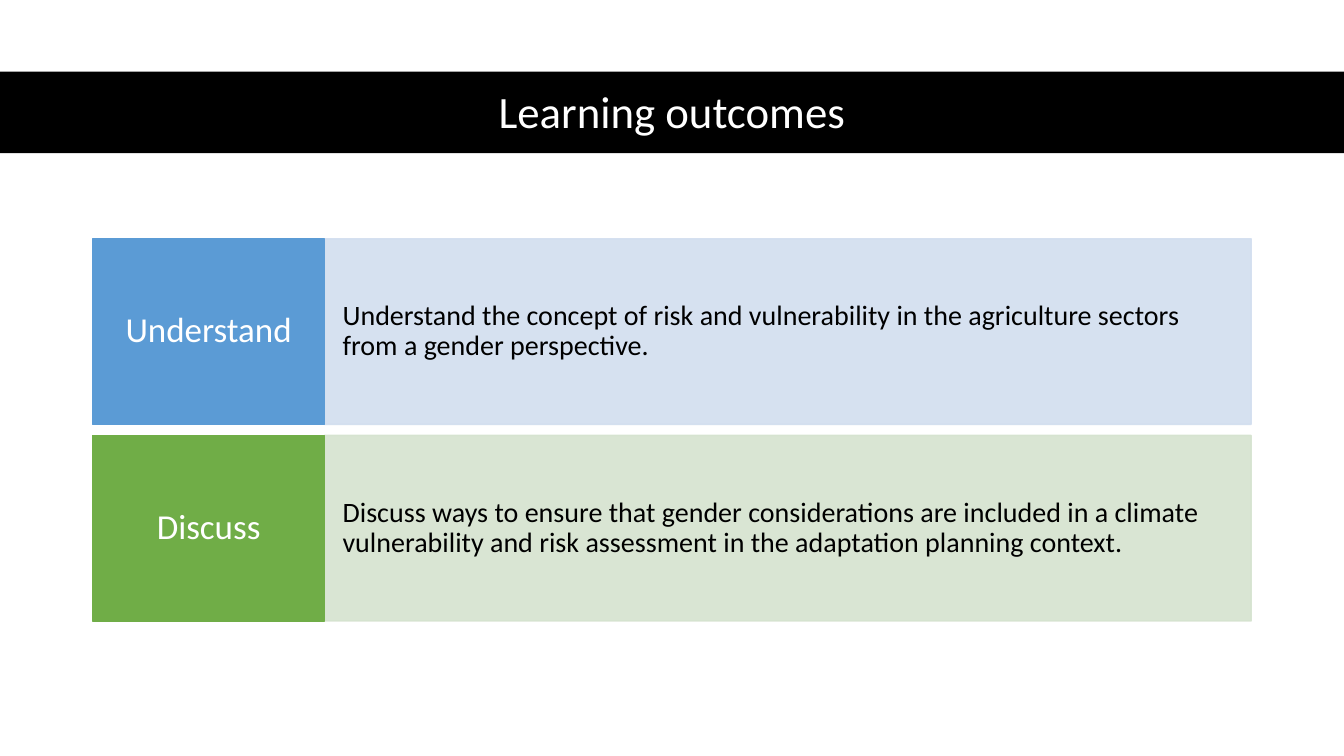
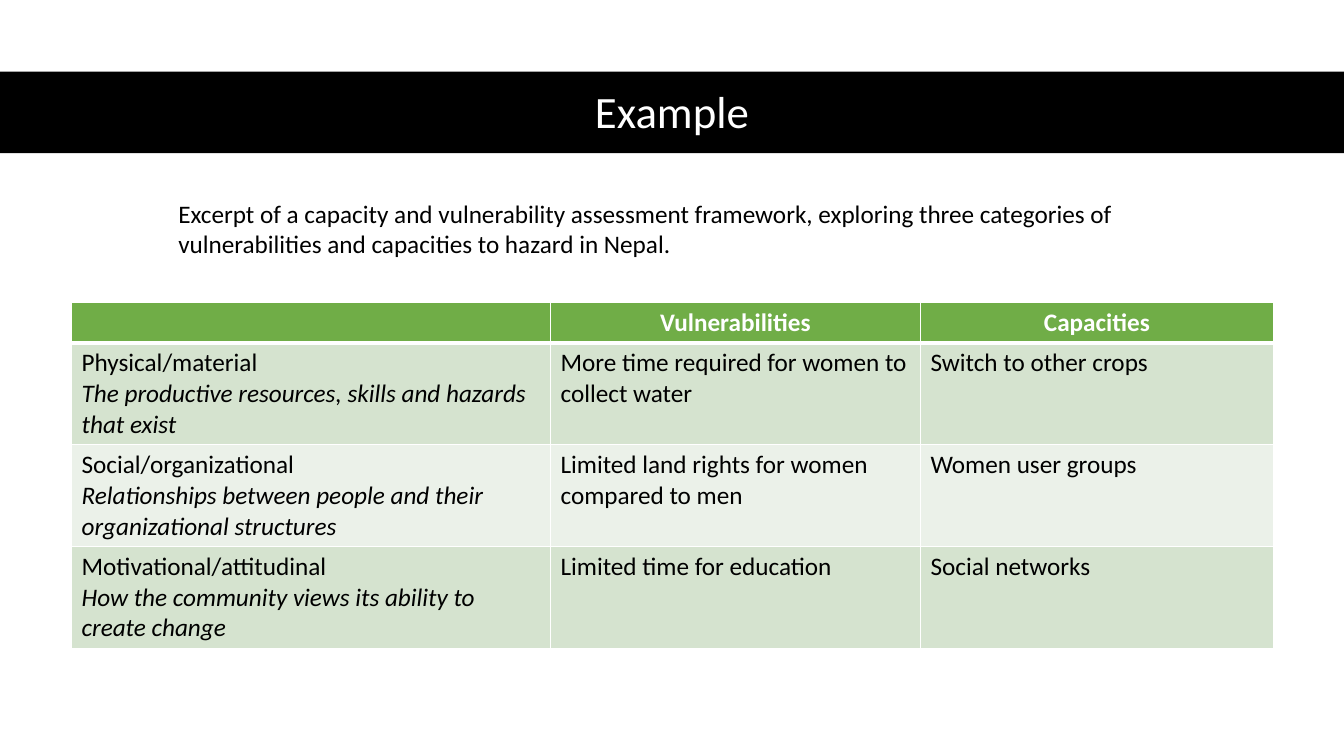
from lxml.etree import SubElement
from pptx import Presentation
from pptx.dml.color import RGBColor
from pptx.enum.shapes import MSO_SHAPE
from pptx.enum.text import MSO_ANCHOR, PP_ALIGN
from pptx.oxml import parse_xml
from pptx.oxml.ns import nsdecls, qn
from pptx.util import Inches, Pt

FONT = "Calibri"
BLACK = RGBColor(0x00, 0x00, 0x00)
WHITE = RGBColor(0xFF, 0xFF, 0xFF)
BLUE = RGBColor(0x5B, 0x9B, 0xD5)
BLUE_TINT = RGBColor(0xD2, 0xDE, 0xEF)
GREEN = RGBColor(0x70, 0xAD, 0x47)
GREEN_TINT = RGBColor(0xD5, 0xE3, 0xCF)
GREEN_PALE = RGBColor(0xEB, 0xF1, 0xE9)

WIDTH, HEIGHT = 13.33, 7.5
MARGIN = 0.92
CONTENT_WIDTH = WIDTH - 2 * MARGIN

OUTCOMES = [
    ("Understand", BLUE, BLUE_TINT,
     "Understand the concept of risk and vulnerability in the agriculture "
     "sectors from a gender perspective."),
    ("Discuss", GREEN, GREEN_TINT,
     "Discuss ways to ensure that gender considerations are included in a "
     "climate vulnerability and risk assessment in the adaptation planning context."),
]
INTRO = [
    "Excerpt of a capacity and vulnerability assessment framework, "
    "exploring three categories of",
    "vulnerabilities and capacities to hazard in Nepal.",
]
HEADINGS = ["", "Vulnerabilities", "Capacities"]
CATEGORIES = [
    ("Physical/material",
     "The productive resources, skills and hazards that exist",
     "More time required for women to collect water", "Switch to other crops"),
    ("Social/organizational",
     "Relationships between people and their organizational structures",
     "Limited land rights for women compared to men", "Women user groups"),
    ("Motivational/attitudinal",
     "How the community views its ability to create change",
     "Limited time for education", "Social networks"),
]
COLUMN_WIDTHS = [4.75, 3.67, 3.5]
ROW_HEIGHTS = [0.4] + [1.01] * len(CATEGORIES)


def write(frame, lines, size=18, color=BLACK, bold=False, italics=(),
          align=PP_ALIGN.LEFT, spacing=1.0, anchor=MSO_ANCHOR.TOP, insets=None):
    frame.word_wrap = True
    frame.vertical_anchor = anchor
    if insets:
        frame.margin_left = frame.margin_right = Inches(insets[0])
        frame.margin_top = frame.margin_bottom = Inches(insets[1])
    for index, line in enumerate(lines):
        para = frame.paragraphs[0] if index == 0 else frame.add_paragraph()
        para.alignment = align
        para.line_spacing = spacing
        span = para.add_run()
        span.text = line
        span.font.name = FONT
        span.font.size = Pt(size)
        span.font.bold = bold
        span.font.italic = index in italics
        span.font.color.rgb = color


def add_box(page, left, top, width, height, color, opacity=100, outlined=True):
    box = page.shapes.add_shape(MSO_SHAPE.RECTANGLE, Inches(left), Inches(top),
                                Inches(width), Inches(height))
    box.shadow.inherit = False
    box.fill.solid()
    box.fill.fore_color.rgb = color
    if outlined:
        box.line.color.rgb = color
        box.line.width = Pt(1)
    else:
        box.line.fill.background()
    if opacity < 100:
        for paint in box.element.spPr.iter(qn("a:srgbClr")):
            SubElement(paint, qn("a:alpha"), val=str(opacity * 1000))
    return box


def add_page(deck, layout, title):
    page = deck.slides.add_slide(layout)
    write(page.shapes.title.text_frame, [title], size=32, color=WHITE,
          align=PP_ALIGN.CENTER, spacing=0.9, anchor=MSO_ANCHOR.MIDDLE)
    return page


def style_layout(layout, page):
    band = add_box(page, 0, 0.71, WIDTH, 0.81, BLACK, outlined=False)
    layout.shapes.element.insert(2, band.element)
    title = layout.placeholders[0]
    title.left, title.top = Inches(MARGIN), Inches(0.74)
    title.width, title.height = Inches(CONTENT_WIDTH), Inches(0.78)


def add_outcomes(page):
    top, height, gap = 2.37, 1.84, 0.11
    label_width = CONTENT_WIDTH / 5
    for index, (label, color, tint, detail) in enumerate(OUTCOMES):
        y = top + index * (height + gap)
        panel = add_box(page, MARGIN + label_width, y,
                        CONTENT_WIDTH - label_width, height, tint, opacity=90)
        write(panel.text_frame, [detail], size=20, spacing=0.9,
              anchor=MSO_ANCHOR.MIDDLE, insets=(0.18, 0.47))
        tile = add_box(page, MARGIN, y, label_width, height, color)
        write(tile.text_frame, [label], size=25, color=WHITE, spacing=0.9,
              align=PP_ALIGN.CENTER, anchor=MSO_ANCHOR.MIDDLE, insets=(0.12, 0.18))


def style_cell(cell, color, top=1, bottom=1):
    cell.fill.solid()
    cell.fill.fore_color.rgb = color
    borders = [("L", 1), ("R", 1), ("T", top), ("B", bottom)]
    for index, (side, points) in enumerate(borders):
        cell._tc.get_or_add_tcPr().insert(index, parse_xml(
            f'<a:ln{side} {nsdecls("a")} w="{Pt(points)}"><a:solidFill>'
            f'<a:srgbClr val="{WHITE}"/></a:solidFill></a:ln{side}>'))


def add_framework(page):
    intro = page.shapes.add_textbox(Inches(1.67), Inches(1.92), Inches(9.63), Inches(0.71))
    write(intro.text_frame, INTRO)
    table = page.shapes.add_table(
        len(ROW_HEIGHTS), len(COLUMN_WIDTHS), Inches(0.71), Inches(3),
        Inches(sum(COLUMN_WIDTHS)), Inches(sum(ROW_HEIGHTS))).table
    table.horz_banding = False
    for column, width in zip(table.columns, COLUMN_WIDTHS):
        column.width = Inches(width)
    for row, height in zip(table.rows, ROW_HEIGHTS):
        row.height = Inches(height)
    for column, heading in enumerate(HEADINGS):
        cell = table.cell(0, column)
        style_cell(cell, GREEN, bottom=3)
        if heading:
            write(cell.text_frame, [heading], color=WHITE, bold=True, align=PP_ALIGN.CENTER)
    for row, (name, meaning, weakness, strength) in enumerate(CATEGORIES, start=1):
        for column, lines in enumerate([[name, meaning], [weakness], [strength]]):
            cell = table.cell(row, column)
            style_cell(cell, GREEN_TINT if row % 2 else GREEN_PALE,
                       top=3 if row == 1 else 1)
            write(cell.text_frame, lines, italics=(1,))


def main():
    deck = Presentation()
    deck.slide_width, deck.slide_height = Inches(WIDTH), Inches(HEIGHT)
    layout = deck.slide_layouts.get_by_name("Title Only")
    outcomes = add_page(deck, layout, "Learning outcomes")
    style_layout(layout, outcomes)
    add_outcomes(outcomes)
    add_framework(add_page(deck, layout, "Example"))
    deck.save("out.pptx")


if __name__ == "__main__":
    main()
